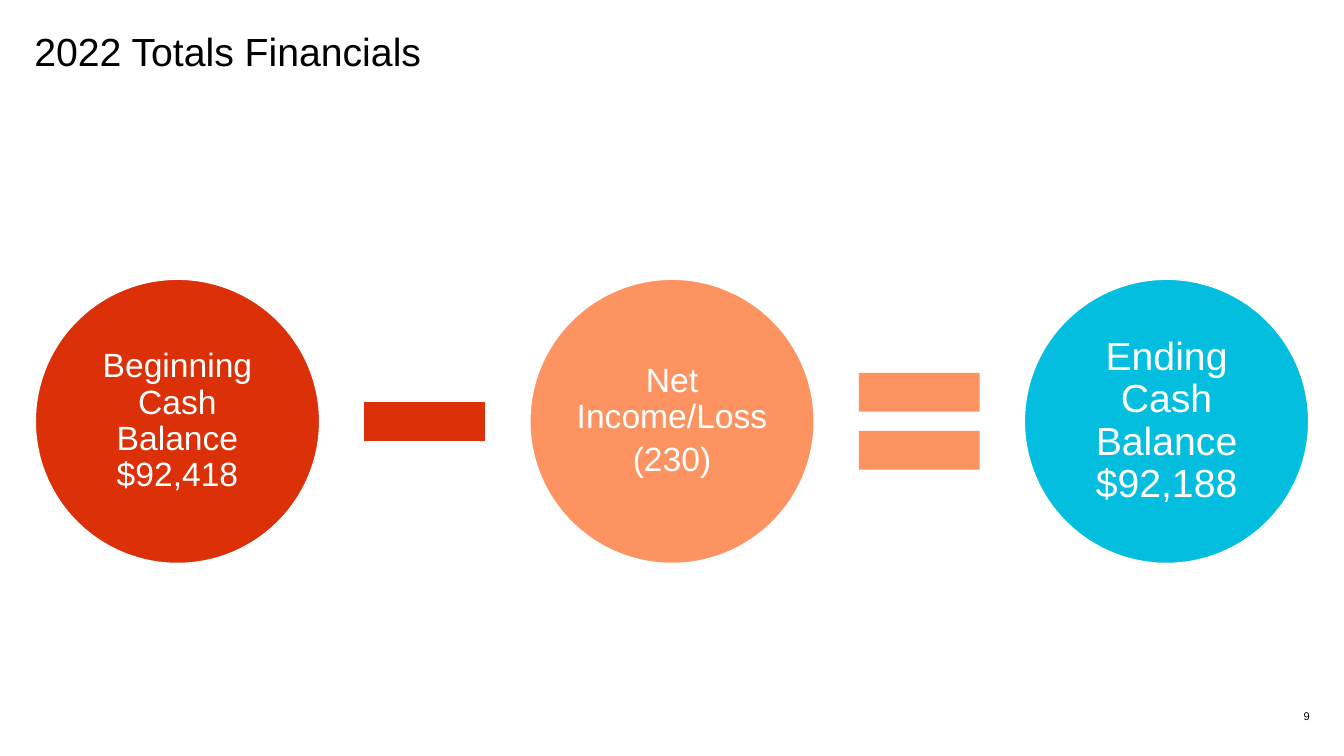
from pptx import Presentation
from pptx.dml.color import RGBColor
from pptx.enum.shapes import MSO_SHAPE
from pptx.enum.text import MSO_ANCHOR, PP_ALIGN
from pptx.util import Inches, Pt

RED, ORANGE, CYAN = "DC3009", "FD9360", "03BEDF"
WHITE, BLACK = "FFFFFF", "000000"
CIRCLE, SIGN, STEP = 2.82, 1.63, 4.905
LEFT, MIDDLE = 0.35, 4.18


def color(value):
    return RGBColor.from_string(value)


def write(sp, lines, size, font_color, align, anchor, inset=(0, 0), spacing=0.9):
    """Fill a shape's text frame, one paragraph per line; inset is (x, y) in inches."""
    tf = sp.text_frame
    x, y = (Inches(v) for v in inset)
    frame_format = {
        "word_wrap": True, "vertical_anchor": anchor,
        "margin_left": x, "margin_right": x, "margin_top": y, "margin_bottom": y,
    }
    for name, value in frame_format.items():
        setattr(tf, name, value)
    for i, line in enumerate(lines):
        p = tf.paragraphs[0] if i == 0 else tf.add_paragraph()
        p.alignment, p.line_spacing = align, spacing
        if i:
            p.space_before = Pt(4.9)
        r = p.add_run()
        r.text = line
        for name, value in {"name": "Arial", "size": Pt(size)}.items():
            setattr(r.font, name, value)
        r.font.color.rgb = color(font_color)


prs = Presentation()
prs.slide_width, prs.slide_height = Inches(13.33), Inches(7.5)
s = prs.slides.add_slide(prs.slide_layouts[6])

title = s.shapes.add_textbox(Inches(0.34), Inches(0.33), Inches(12.64), Inches(0.41))
write(title, ["2022 Totals Financials"], 28, BLACK, PP_ALIGN.LEFT, MSO_ANCHOR.MIDDLE)

# Each term of the equation, with the sign that follows it
terms = [
    (["Beginning Cash Balance $92,418"], 24, RED, MSO_SHAPE.MATH_MINUS, [0.235]),
    (["Net Income/Loss", "(230)"], 24, ORANGE, MSO_SHAPE.MATH_EQUAL, [0.235, 0.118]),
    (["Ending Cash Balance $92,188"], 28, CYAN, None, []),
]
for i, (lines, size, fill, sign, adjustments) in enumerate(terms):
    left = LEFT + i * STEP
    sp = s.shapes.add_shape(MSO_SHAPE.OVAL, Inches(left), Inches(MIDDLE - CIRCLE / 2),
                            Inches(CIRCLE), Inches(CIRCLE))
    sp.shadow.inherit = False
    sp.fill.solid()
    sp.fill.fore_color.rgb = color(fill)
    sp.line.color.rgb = color(WHITE)
    sp.line.width = Pt(1)
    write(sp, lines, size, WHITE, PP_ALIGN.CENTER, MSO_ANCHOR.MIDDLE, (0.03, 0.02))

    if sign is not None:
        gap = (STEP - CIRCLE - SIGN) / 2
        sp = s.shapes.add_shape(sign, Inches(left + CIRCLE + gap), Inches(MIDDLE - SIGN / 2),
                                Inches(SIGN), Inches(SIGN))
        sp.shadow.inherit = False
        sp.fill.solid()
        sp.fill.fore_color.rgb = color(fill)
        sp.line.fill.background()
        for n, value in enumerate(adjustments):
            sp.adjustments[n] = value

number = s.shapes.add_textbox(Inches(12.54), Inches(6.95), Inches(0.45), Inches(0.22))
write(number, ["9"], 8, BLACK, PP_ALIGN.RIGHT, MSO_ANCHOR.BOTTOM, spacing=1.0)

prs.save("out.pptx")
